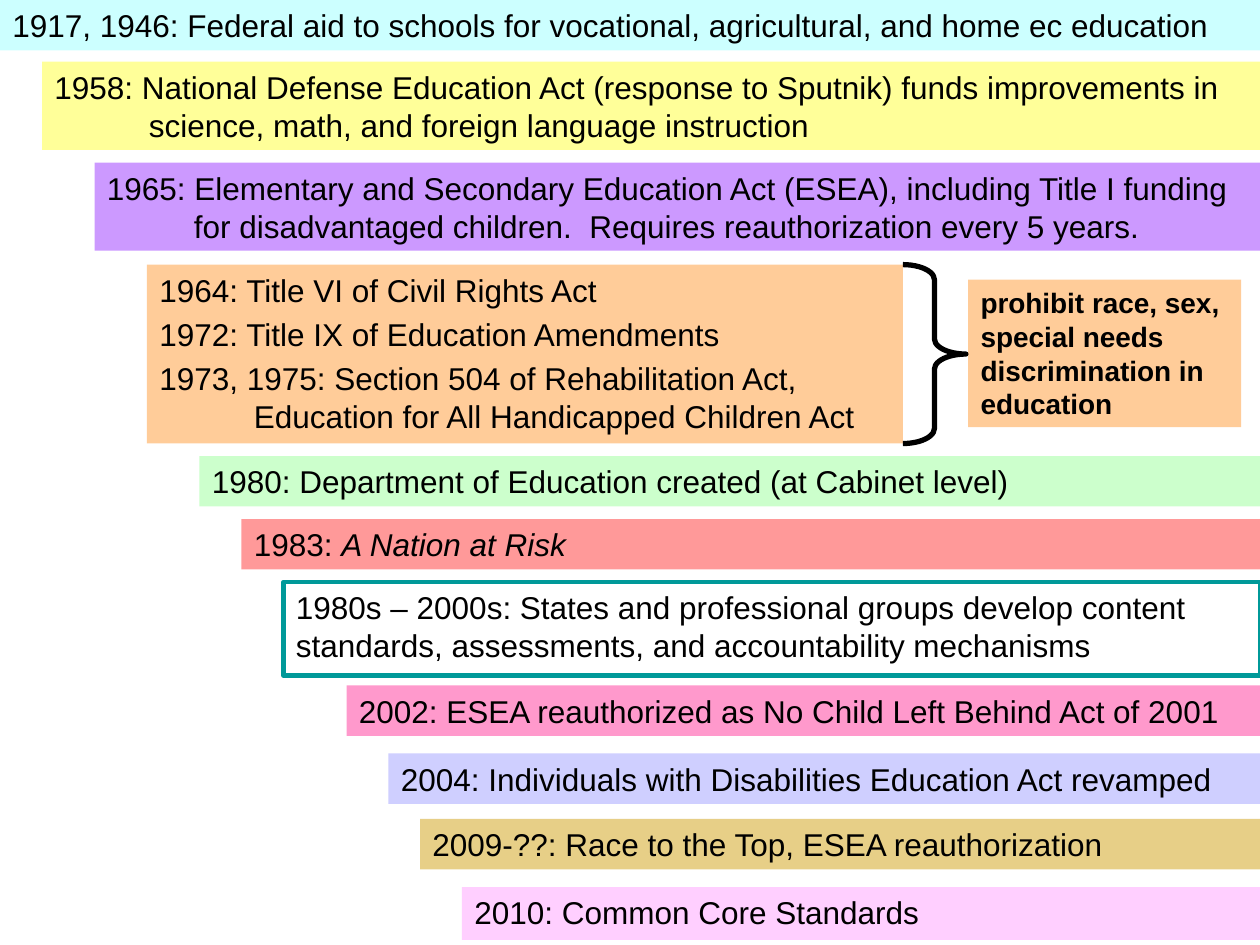
from dataclasses import dataclass
from typing import Optional

from lxml import etree
from pptx import Presentation
from pptx import util as u
from pptx.dml.color import RGBColor
from pptx.enum import shapes, text
from pptx.oxml import ns

WIDE, HIGH = u.Inches(10), u.Inches(7.5)
COL, ROW = WIDE / 120, HIGH / 750
COLS = 120
TONES = {
    "ink": "000000", "cyan": "CCFFFF", "lemon": "FFFF99", "violet": "CC99FF",
    "peach": "FFCC99", "mint": "CCFFCC", "red": "FF0000", "teal": "009999",
    "pink": "FF99CC", "blue": "9999FF", "gold": "CC9900", "rose": "FF99FF",
}
FRAME = {"word_wrap": True, "auto_size": text.MSO_AUTO_SIZE.NONE,
         "vertical_anchor": text.MSO_ANCHOR.TOP}


@dataclass
class Band:
    col: float
    row: float
    rows: float
    lines: list
    tone: Optional[str] = None
    cols: Optional[float] = None
    hang: float = 0
    alpha: int = 100
    edge: Optional[str] = None
    size: int = 18
    bold: bool = False


BANDS = [
    Band(0, 0, 40, ["1917, 1946: Federal aid to schools for vocational, agricultural, "
                    "and home ec education"], "cyan"),
    Band(4, 49, 70, ["1958: National Defense Education Act (response to Sputnik) funds "
                     "improvements in science, math, and foreign language instruction"],
         "lemon", hang=0.75),
    Band(9, 129, 70, ["1965: Elementary and Secondary Education Act (ESEA), including "
                      "Title I funding for disadvantaged children.  Requires "
                      "reauthorization every 5 years."], "violet", hang=0.69),
    Band(14, 210, 142, ["1964: Title VI of Civil Rights Act",
                        "1972: Title IX of Education Amendments",
                        "1973, 1975: Section 504 of Rehabilitation Act, "
                        "Education for All Handicapped Children Act"],
         "peach", cols=72, hang=0.75),
    Band(92.2, 222, 117, ["prohibit race, sex, special needs discrimination in education"],
         "peach", cols=26, size=16, bold=True),
    Band(19, 362, 40, ["1980: Department of Education created (at Cabinet level)"],
         "mint", hang=0.32),
    Band(23, 412, 40, [("1983: ", "A Nation at Risk")], "red", alpha=40),
    Band(27, 462, 74, ["1980s – 2000s: States and professional groups develop content "
                       "standards, assessments, and accountability mechanisms"], edge="teal"),
    Band(33, 544, 40, ["2002: ESEA reauthorized as No Child Left Behind Act of 2001"],
         "pink", hang=0.69),
    Band(37, 598, 40, ["2004: Individuals with Disabilities Education Act revamped"],
         "blue", alpha=47),
    Band(40, 650, 40, ["2009-??: Race to the Top, ESEA reauthorization"], "gold", alpha=47),
    Band(44, 704, 42, ["2010: Common Core Standards"], "rose", alpha=47),
]


def hue(name: str) -> RGBColor:
    return RGBColor.from_string(TONES[name])


def place(slide, kind, col: float, row: float, cols: float, rows: float):
    shape = slide.shapes.add_shape(
        kind, round(col * COL), round(row * ROW), round(cols * COL), round(rows * ROW))
    shape.shadow.inherit = False
    return shape


def paint(shape, tone: Optional[str], alpha: int) -> None:
    if tone is None:
        shape.fill.background()
        return
    shape.fill.solid()
    shape.fill.fore_color.rgb = hue(tone)
    if alpha < 100:
        clr = shape.fill._xPr.find(".//" + ns.qn("a:srgbClr"))
        etree.SubElement(clr, ns.qn("a:alpha"), val=str(alpha * 1000))


def stroke(shape, tone: Optional[str], width: float) -> None:
    if tone is None:
        shape.line.fill.background()
        return
    shape.line.color.rgb = hue(tone)
    shape.line.width = u.Pt(width)


def write(frame, band: Band) -> None:
    for key, val in FRAME.items():
        setattr(frame, key, val)
    font = {"name": "Arial", "size": u.Pt(band.size), "bold": band.bold}
    for num, line in enumerate(band.lines):
        para = frame.add_paragraph() if num else frame.paragraphs[0]
        para.alignment = text.PP_ALIGN.LEFT
        para.space_before = u.Pt(3.6 if num else 0)
        if band.hang:
            props = para._p.get_or_add_pPr()
            props.set("marL", str(u.Inches(band.hang)))
            props.set("indent", str(-u.Inches(band.hang)))
        parts = (line,) if isinstance(line, str) else line
        for spot, part in enumerate(parts):
            run = para.add_run()
            run.text = part
            for key, val in {**font, "italic": spot > 0}.items():
                setattr(run.font, key, val)
            run.font.color.rgb = hue("ink")


def draw(slide, band: Band) -> None:
    cols = band.cols or COLS - band.col
    shape = place(slide, shapes.MSO_SHAPE.RECTANGLE, band.col, band.row, cols, band.rows)
    paint(shape, band.tone, band.alpha)
    stroke(shape, band.edge, 2.75)
    write(shape.text_frame, band)


def brace(slide, col: float, row: float, cols: float, rows: float) -> None:
    shape = place(slide, shapes.MSO_SHAPE.RIGHT_BRACE, col, row, cols, rows)
    shape.adjustments[0] = 0.24
    paint(shape, None, 100)
    stroke(shape, "ink", 3)


def main() -> None:
    deck = Presentation()
    deck.slide_width, deck.slide_height = WIDE, HIGH
    slide = deck.slides.add_slide(deck.slide_layouts[6])
    for band in BANDS:
        draw(slide, band)
    brace(slide, 86, 210, 6, 142)
    deck.save("out.pptx")


if __name__ == "__main__":
    main()
